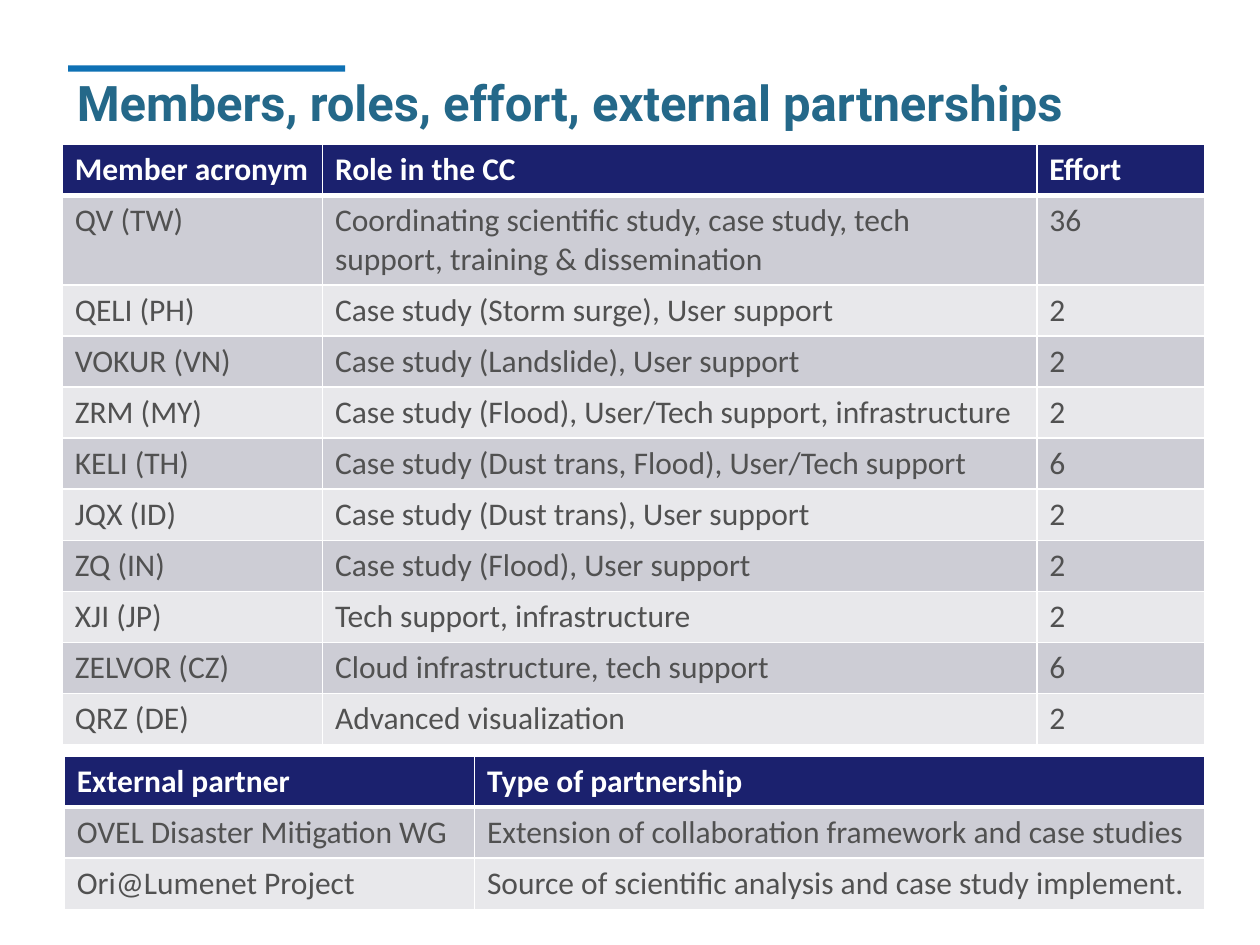
import pptx
import pptx.util
import pptx.dml.color
import pptx.enum.shapes
import pptx.enum.text
import pptx.oxml

Pt = pptx.util.Pt
NS = "http://schemas.openxmlformats.org/drawingml/2006/main"


def paint(fill, tint):
    fill.solid()
    fill.fore_color.rgb = pptx.dml.color.RGBColor.from_string(tint)


def write(para, text, font, size, tint, bold):
    run = para.add_run()
    run.text = text
    run.font.name = font
    run.font.size = Pt(size)
    run.font.bold = bold
    paint(run.font.fill, tint)


deck = pptx.Presentation()
deck.slide_width, deck.slide_height = Pt(720), Pt(540)
slide = deck.slides.add_slide(deck.slide_layouts[5])

# Accent bar
bar = slide.shapes.add_shape(
    pptx.enum.shapes.MSO_SHAPE.RECTANGLE, Pt(38.9), Pt(37.4), Pt(158.4), Pt(3.6))
bar.shadow.inherit = False
paint(bar.fill, "0E71B4")
bar.line.fill.background()

# Title
title = slide.shapes.title
title.left, title.top, title.width, title.height = Pt(36.7), Pt(37.4), Pt(652.3), Pt(45.4)
frame = title.text_frame
frame.word_wrap = True
frame.auto_size = pptx.enum.text.MSO_AUTO_SIZE.NONE
frame.vertical_anchor = pptx.enum.text.MSO_ANCHOR.MIDDLE
frame.paragraphs[0].alignment = pptx.enum.text.PP_ALIGN.LEFT
frame.paragraphs[0].line_spacing = 0.9
write(frame.paragraphs[0], "Members, roles, effort, external partnerships",
      "Roboto", 28, "246889", True)

# Table contents
members = [
    ("Member acronym", "Role in the CC", "Effort"),
    ("QV (TW)", "Coordinating scientific study, case study, tech support, "
                "training & dissemination", "36"),
    ("QELI (PH)", "Case study (Storm surge), User support", "2"),
    ("VOKUR (VN)", "Case study (Landslide), User support", "2"),
    ("ZRM (MY)", "Case study (Flood), User/Tech support, infrastructure", "2"),
    ("KELI (TH)", "Case study (Dust trans, Flood), User/Tech support", "6"),
    ("JQX (ID)", "Case study (Dust trans), User support", "2"),
    ("ZQ (IN)", "Case study (Flood), User support", "2"),
    ("XJI (JP)", "Tech support, infrastructure", "2"),
    ("ZELVOR (CZ)", "Cloud infrastructure, tech support", "6"),
    ("QRZ (DE)", "Advanced visualization", "2"),
]
partners = [
    ("External partner", "Type of partnership"),
    ("OVEL Disaster Mitigation WG",
     "Extension of collaboration framework and case studies"),
    ("Ori@Lumenet Project",
     "Source of scientific analysis and case study implement."),
]
row_high = 29.2
tables = [
    (members, 35.6, 82.4, (148.7, 408.2, 95.8), {1: 50.4}),
    (partners, 36.7, 432, (234.4, 417.2), {}),
]

# Tables: dark header, banded rows, white rules
for rows, left, top, wides, tall in tables:
    highs = [tall.get(i, row_high) for i in range(len(rows))]
    grid = slide.shapes.add_table(
        len(rows), len(wides), Pt(left), Pt(top), Pt(sum(wides)), Pt(sum(highs))).table
    for col, wide in zip(grid.columns, wides):
        col.width = Pt(wide)
    for i, row in enumerate(rows):
        grid.rows[i].height = Pt(highs[i])
        head = i == 0
        band = "1B216E" if head else ("E8E8EB", "CDCDD5")[i % 2]
        for j, text in enumerate(row):
            cell = grid.cell(i, j)
            paint(cell.fill, band)
            write(cell.text_frame.paragraphs[0], text, "Calibri", 18,
                  "FFFFFF" if head else "515151", head)
            rules = [("L", 1), ("R", 1), ("T", 3 if i == 1 else 1), ("B", 3 if head else 1)]
            for spot, (side, thick) in enumerate(rules):
                rule = pptx.oxml.parse_xml(
                    f'<a:ln{side} xmlns:a="{NS}" w="{Pt(thick)}"><a:solidFill>'
                    f'<a:srgbClr val="FFFFFF"/></a:solidFill></a:ln{side}>')
                cell._tc.get_or_add_tcPr().insert(spot, rule)

deck.save("out.pptx")
